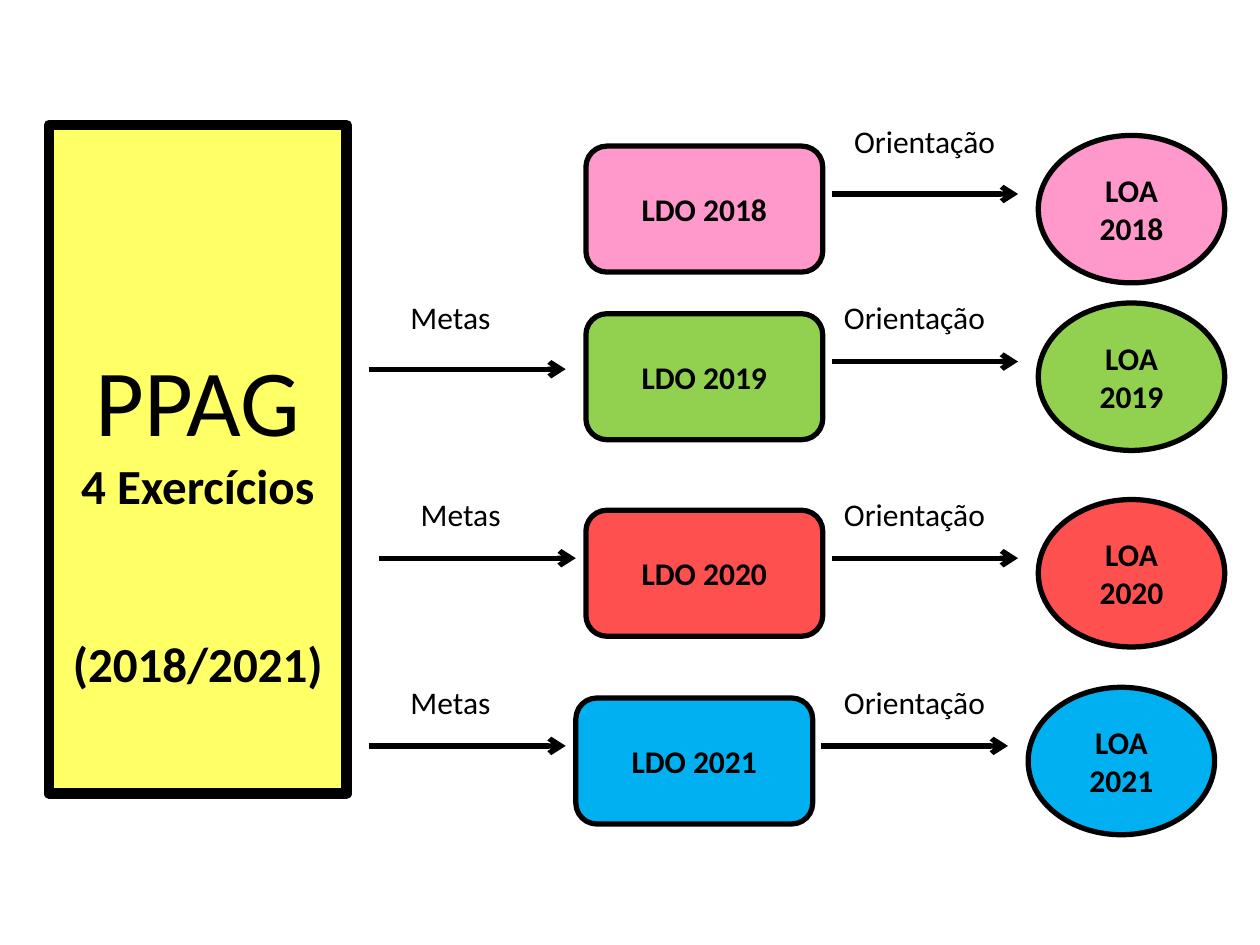
from lxml.etree import SubElement
from pptx import Presentation
from pptx.dml.color import RGBColor
from pptx.enum.shapes import MSO_CONNECTOR, MSO_SHAPE
from pptx.enum.text import MSO_ANCHOR, PP_ALIGN
from pptx.oxml.ns import qn
from pptx.util import Inches, Pt

BLACK = "000000"
PLAN = {"fill": "FFFF66", "box": (0.39, 0.99, 2.36, 5.31), "top_inset": 0.97}
PLAN_LINES = [
    ("PPAG", {"size": 54}),
    ("4 Exercícios", {"size": 28, "bold": True}),
    ("(2018/2021)", {"size": 28, "bold": True, "space_before": 68}),
]

YEARS = [
    {"year": 2018, "fill": "FF99CC", "middle": 1.66, "label_shift": 0.08, "label_rise": 0.74},
    {"year": 2019, "fill": "92D050", "middle": 2.99, "goal_left": 2.93, "goal_rise": 0.06},
    {"year": 2020, "fill": "FF5050", "middle": 4.55, "goal_left": 3.01},
    {"year": 2021, "fill": "00B0F0", "middle": 6.04, "goal_left": 2.93, "shift": -0.08},
]

COLUMNS = {"ldo": 4.65, "guidance": 6.6, "loa": 8.24}
LDO_SIZE = (1.88, 1.0)
LOA_SIZE = (1.48, 1.17)
GOAL_LENGTH, GUIDANCE_LENGTH = 1.56, 1.48
ARROW_RISE, LABEL_RISE = 0.12, 0.67
GOAL_LABEL_INDENT = 0.23
LABEL_HEIGHT = 0.4


def color(value):
    return RGBColor.from_string(value)


def write(paragraph, text, size=18, bold=False, align=PP_ALIGN.CENTER, space_before=0):
    paragraph.alignment = align
    paragraph.space_before = Pt(space_before)
    run = paragraph.add_run()
    run.text = text
    run.font.name = "Calibri"
    run.font.size = Pt(size)
    run.font.bold = bold
    run.font.color.rgb = color(BLACK)


def add_box(slide, kind, box, fill, lines, line_width=3):
    shape = slide.shapes.add_shape(kind, *map(Inches, box))
    shape.shadow.inherit = False
    shape.fill.solid()
    shape.fill.fore_color.rgb = color(fill)
    shape.line.color.rgb = color(BLACK)
    shape.line.width = Pt(line_width)
    frame = shape.text_frame
    frame.word_wrap = True
    frame.vertical_anchor = MSO_ANCHOR.MIDDLE
    for index, (text, style) in enumerate(lines):
        paragraph = frame.add_paragraph() if index else frame.paragraphs[0]
        write(paragraph, text, **style)
    return shape


def add_arrow(slide, left, y, length):
    ends = map(Inches, (left, y, left + length, y))
    arrow = slide.shapes.add_connector(MSO_CONNECTOR.STRAIGHT, *ends)
    arrow.line.color.rgb = color(BLACK)
    arrow.line.width = Pt(3)
    SubElement(arrow.line._get_or_add_ln(), qn("a:tailEnd"), type="arrow")
    SubElement(arrow._element.spPr, qn("a:effectLst"))


def add_label(slide, text, left, top, width):
    label = slide.shapes.add_textbox(*map(Inches, (left, top, width, LABEL_HEIGHT)))
    label.text_frame.word_wrap = False
    write(label.text_frame.paragraphs[0], text, align=PP_ALIGN.LEFT)


def add_year(slide, row):
    middle, shift = row["middle"], row.get("shift", 0)
    arrow_y = middle - ARROW_RISE
    label_top = middle - row.get("label_rise", LABEL_RISE)
    stages = [
        ("LDO", MSO_SHAPE.ROUNDED_RECTANGLE, COLUMNS["ldo"], LDO_SIZE),
        ("LOA", MSO_SHAPE.OVAL, COLUMNS["loa"], LOA_SIZE),
    ]
    for name, kind, left, (width, height) in stages:
        box = (left + shift, middle - height / 2, width, height)
        add_box(slide, kind, box, row["fill"], [(f"{name} {row['year']}", {"bold": True})])
    add_arrow(slide, COLUMNS["guidance"] + shift, arrow_y, GUIDANCE_LENGTH)
    label_left = COLUMNS["guidance"] + row.get("label_shift", 0)
    add_label(slide, "Orientação", label_left, label_top, 1.33)
    if "goal_left" in row:
        goal_y = middle - row.get("goal_rise", ARROW_RISE)
        add_arrow(slide, row["goal_left"], goal_y, GOAL_LENGTH)
        add_label(slide, "Metas", row["goal_left"] + GOAL_LABEL_INDENT, label_top, 0.84)


def main():
    presentation = Presentation()
    presentation.slide_width = Inches(10)
    presentation.slide_height = Inches(7.5)
    slide = presentation.slides.add_slide(presentation.slide_layouts[6])
    plan = add_box(slide, MSO_SHAPE.RECTANGLE, PLAN["box"], PLAN["fill"], PLAN_LINES, line_width=6)
    plan.text_frame.margin_top = Inches(PLAN["top_inset"])
    for row in YEARS:
        add_year(slide, row)
    presentation.save("out.pptx")


if __name__ == "__main__":
    main()
